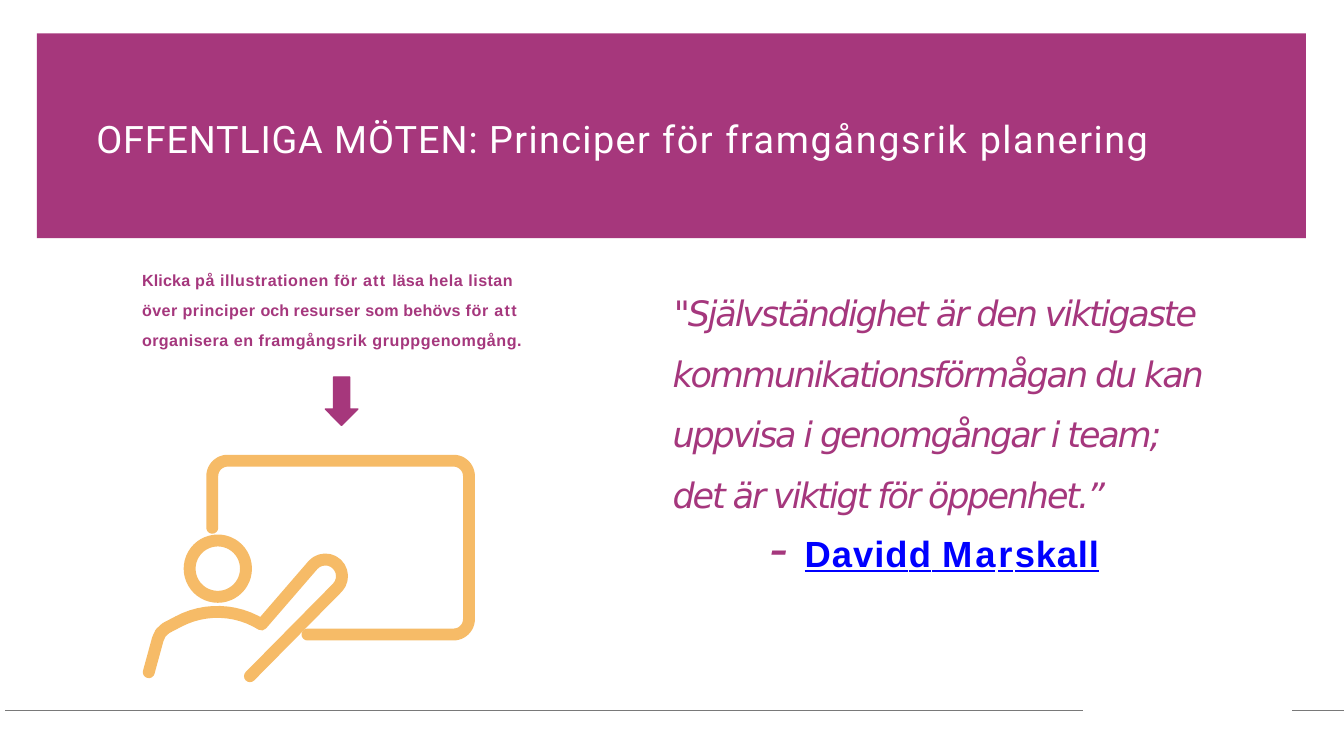
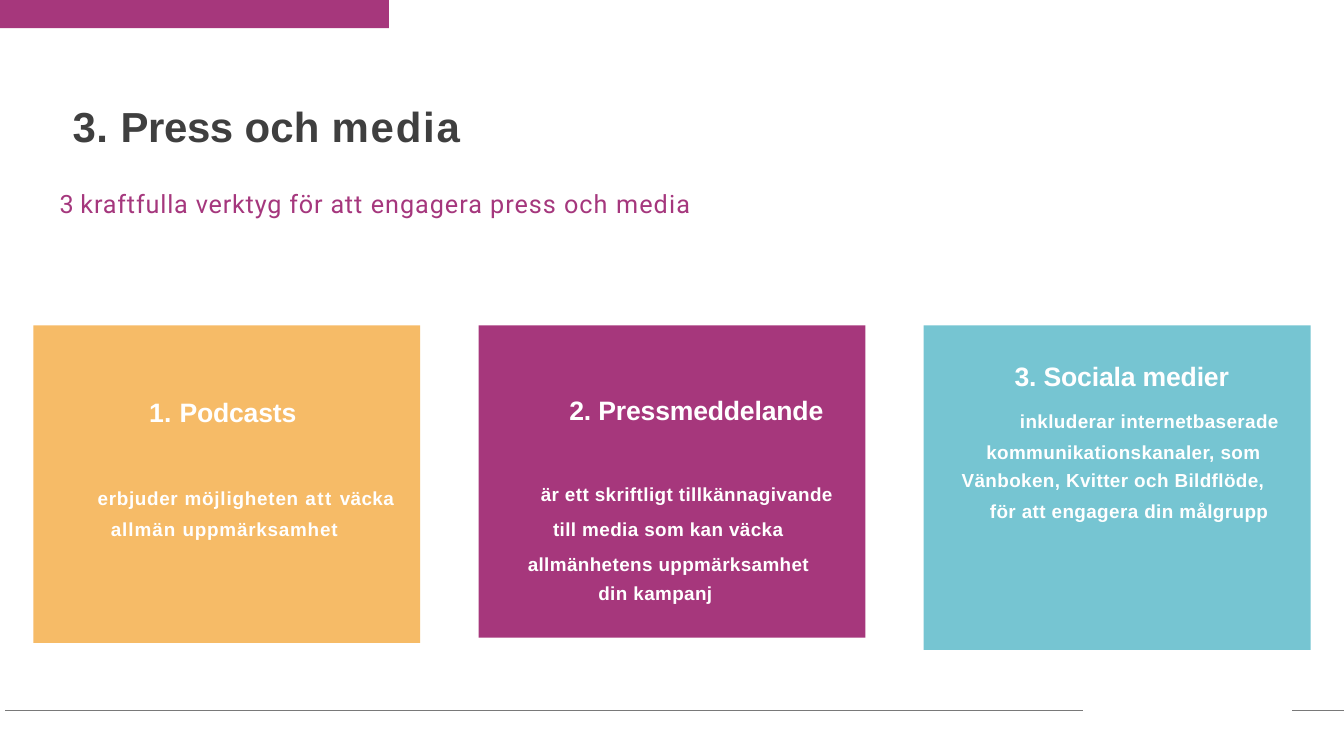
from dataclasses import dataclass, replace
from math import cos, radians, sin
from typing import Optional

from lxml import etree
from pptx import Presentation
from pptx.dml.color import RGBColor
from pptx.enum.shapes import MSO_CONNECTOR as Connector, MSO_SHAPE as Preset
from pptx.enum.text import MSO_ANCHOR as Anchor, MSO_AUTO_SIZE as AutoSize, PP_ALIGN as Align
from pptx.oxml.ns import qn
from pptx.util import Cm, Pt

PLUM = RGBColor(0xA6, 0x37, 0x7C)
PLUM_TEXT = RGBColor(0xA5, 0x37, 0x7D)
AMBER = RGBColor(0xF6, 0xBB, 0x67)
TEAL = RGBColor(0x76, 0xC5, 0xD2)
WHITE = RGBColor(0xFF, 0xFF, 0xFF)
CHARCOAL = RGBColor(0x3F, 0x3F, 0x3F)
LINK_BLUE = RGBColor(0x00, 0x00, 0xFF)
RULE_GREY = RGBColor(0x79, 0x79, 0x79)

SLIDE_WIDTH, SLIDE_HEIGHT = 33.87, 19.05
FOOTER_TOP = 17.91
TEXT_INSET = 0.03
STROKE = 8.5


@dataclass(frozen=True)
class Style:
    size: float
    font: str
    color: RGBColor
    bold: bool = False
    italic: bool = False
    underline: bool = False


@dataclass(frozen=True)
class Span:
    text: str
    spacing: float = 0
    style: Optional[Style] = None


@dataclass(frozen=True)
class Para:
    """A paragraph; left and first are indents in centimetres."""
    style: Style
    spans: tuple[Span, ...]
    left: float = 0
    first: float = 0
    before: float = 0
    line: float | Pt = 1.0
    align: Align = Align.LEFT


@dataclass(frozen=True)
class Frame:
    left: float
    top: float
    width: float
    height: float

    def lengths(self) -> tuple:
        return Cm(self.left), Cm(self.top), Cm(self.width), Cm(self.height)


@dataclass(frozen=True)
class Card:
    color: RGBColor
    height: float
    inset_top: float
    inset_right: float
    paras: tuple[Para, ...]


BANNER = Style(27, "Roboto", WHITE)
HEADING = Style(30, "Arial", CHARCOAL, bold=True)
SUBTITLE = Style(18, "Roboto", PLUM_TEXT)
HINT = Style(11.5, "Arial", PLUM_TEXT, bold=True)
QUOTE = Style(25, "DejaVu Sans", PLUM_TEXT, italic=True)
DASH = replace(QUOTE, size=37.5)
AUTHOR = Style(26, "Arial", LINK_BLUE, bold=True, underline=True)
CARD_HEAD = Style(19, "Arial", WHITE, bold=True)
CARD_BODY = replace(CARD_HEAD, size=13.5)

CARD_LEFT, CARD_TOP, CARD_WIDTH, CARD_PITCH = 0.84, 8.2, 9.75, 11.22
CARDS = (
    Card(AMBER, 8.0, 1.77, 0.43, (
        Para(CARD_HEAD, (Span("1. ", 0.2), Span("Podcasts", -0.1)), left=2.92),
        Para(CARD_BODY, (Span("erbjuder ", 0.5), Span("möjligheten ", 0.6), Span("att ", 1.1),
                         Span("väcka\n", 0.3), Span("allmän ", 0.7), Span("uppmärksamhet", 0.6)),
             left=0.31, first=1.09, before=35.5, line=1.4, align=Align.CENTER),
    )),
    Card(PLUM, 7.87, 1.72, 0.51, (
        Para(CARD_HEAD, (Span("2. Pressmeddelande", -0.1),), left=2.29),
        Para(CARD_BODY, (Span("är ett skriftligt tillkännagivande\ntill media som kan väcka\n"
                              "allmänhetens uppmärksamhet", 0.3),),
             left=0.34, first=0.94, before=32, line=1.55, align=Align.CENTER),
        Para(CARD_BODY, (Span("din kampanj", 0.3),), left=3.02, before=4),
    )),
    Card(TEAL, 8.18, 0.86, 0.48, (
        Para(CARD_HEAD, (Span("3. Sociala medier", -0.1),), left=2.29),
        Para(CARD_BODY, (Span("inkluderar internetbaserade", 0.3),),
             left=2.11, before=13, align=Align.CENTER),
        Para(CARD_BODY, (Span("kommunikationskanaler, som\nVänboken, Kvitter och Bildflöde,", 0.3),),
             left=0.28, first=0.53, before=2, line=1.24, align=Align.CENTER),
        Para(CARD_BODY, (Span("för att engagera din målgrupp", 0.3),),
             left=0.28, first=0.81, before=2, line=1.24, align=Align.CENTER),
    )),
)


def arc(x: float, y: float, radius: float, start: int, end: int, steps: int = 12) -> tuple:
    """Points along a circle, clockwise from start to end in degrees."""
    angles = [radians(start + (end - start) * step / steps) for step in range(steps + 1)]
    return tuple((x + radius * cos(angle), y + radius * sin(angle)) for angle in angles)


# Centre lines of the presenter icon, in centimetres
BOARD = ((5.35, 13.3), *arc(5.74, 12, 0.39, 180, 270), *arc(11.43, 12, 0.39, 270, 360),
         *arc(11.43, 15.6, 0.39, 0, 90), (7.75, 15.99))
PRESENTER = ((3.75, 16.94), (3.98, 16.1), (4.05, 15.95), (4.18, 15.83),
             *arc(5.48, 17.52, 2.1, 242, 302), *arc(8.2, 14.52, 0.42, 223, 403),
             (6.3, 17.04))
HEAD = Frame(4.78, 13.62, 1.42, 1.42)


def write(box, paras: tuple[Para, ...], top: float = TEXT_INSET, right: float = 0,
          anchor: Anchor = Anchor.TOP) -> None:
    """Fill the text frame of a box, run by run."""
    frame = box.text_frame
    frame.word_wrap = True
    frame.auto_size = AutoSize.NONE
    frame.vertical_anchor = anchor
    frame.margin_left = frame.margin_bottom = 0
    frame.margin_top, frame.margin_right = Cm(top), Cm(right)
    for index, para in enumerate(paras):
        line = frame.paragraphs[0] if index == 0 else frame.add_paragraph()
        props = line._p.get_or_add_pPr()
        props.set("marL", str(Cm(para.left)))
        props.set("indent", str(Cm(para.first)))
        etree.SubElement(props, qn("a:buNone"))
        line.alignment = para.align
        line.line_spacing = para.line
        line.space_before = Pt(para.before)
        line.space_after = Pt(0)
        for span in para.spans:
            for part, text in enumerate(span.text.split("\n")):
                if part:
                    line.add_line_break()
                if text:
                    add_run(line, text, span.spacing, span.style or para.style)


def add_run(line, text: str, spacing: float, style: Style) -> None:
    run = line.add_run()
    run.text = text
    font = run.font
    font.name, font.size = style.font, Pt(style.size)
    font.bold, font.italic, font.underline = style.bold, style.italic, style.underline
    font.color.rgb = style.color
    run._r.get_or_add_rPr().set("spc", str(round(spacing * 100)))


def place(box, frame: Frame):
    box.left, box.top, box.width, box.height = frame.lengths()
    return box


def add_filled(page, preset: Preset, frame: Frame, color: RGBColor):
    shape = page.shapes.add_shape(preset, *frame.lengths())
    shape.shadow.inherit = False
    shape.fill.solid()
    shape.fill.fore_color.rgb = color
    shape.line.fill.background()
    return shape


def stroke_only(shape) -> None:
    """Leave a shape with a thick rounded outline and no fill."""
    shape.shadow.inherit = False
    shape.fill.background()
    shape.line.color.rgb = AMBER
    shape.line.width = Pt(STROKE)
    outline = shape.line._get_or_add_ln()
    outline.set("cap", "rnd")
    etree.SubElement(outline, qn("a:round"))


def add_icon(page) -> None:
    for points in (BOARD, PRESENTER):
        (start_x, start_y), *rest = [(Cm(x), Cm(y)) for x, y in points]
        builder = page.shapes.build_freeform(start_x, start_y)
        builder.add_line_segments(rest, close=False)
        stroke_only(builder.convert_to_shape())
    stroke_only(page.shapes.add_shape(Preset.OVAL, *HEAD.lengths()))


def add_page(deck):
    """Add a title-and-body page with the two footer rules."""
    page = deck.slides.add_slide(deck.slide_layouts[1])
    for start, end in ((0.13, 27.28), (32.56, SLIDE_WIDTH)):
        rule = page.shapes.add_connector(Connector.STRAIGHT, Cm(start), Cm(FOOTER_TOP),
                                         Cm(end), Cm(FOOTER_TOP))
        rule.line.color.rgb = RULE_GREY
        rule.line.width = Pt(0.5)
        etree.SubElement(rule._element.spPr, qn("a:effectLst"))
    return page


def add_meeting_page(deck) -> None:
    page = add_page(deck)
    # Title band
    title = place(page.shapes.title, Frame(0.93, 0.84, 31.98, 5.16))
    title.fill.solid()
    title.fill.fore_color.rgb = PLUM
    write(title, (Para(BANNER, (
        Span("OFFENTLIGA ", 0.6), Span("MÖTEN: ", 0.7), Span("Principer ", 1),
        Span("för ", 1.1), Span("framgångsrik ", 1.2), Span("planering", 1.1)), left=1.5),),
        top=0.15, anchor=Anchor.MIDDLE)
    # Hint, arrow and icon
    hint = page.shapes.add_textbox(*Frame(3.53, 6.5, 9.8, 2.36).lengths())
    write(hint, (Para(HINT, (
        Span("Klicka ", 0.1), Span("på illustrationen ", 0.4), Span("för ", 0.5),
        Span("att ", 0.9), Span("läsa ", 0.1), Span("hela ", 0.4),
        Span("listan\növer principer ", 0.3), Span("och "), Span("resurser ", 0.2),
        Span("som behövs ", 0.1), Span("för ", 0.5), Span("att\n", 0.9),
        Span("organisera ", 0.3), Span("en framgångsrik ", 0.4),
        Span("gruppgenomgång.", 0.4)), left=0.05, line=1.56),))
    arrow = add_filled(page, Preset.DOWN_ARROW, Frame(8.2, 9.5, 0.82, 1.22), PLUM)
    arrow.line.color.rgb = PLUM
    arrow.line.width = Pt(1)
    add_icon(page)
    # Quotation
    quote = place(page.placeholders[1], Frame(16.92, 6.86, 13.9, 7.8))
    write(quote, (
        Para(QUOTE, (Span("\"Självständighet är den viktigaste\nkommunikationsförmågan du kan\n"
                          "uppvisa i genomgångar i team;\ndet är viktigt för öppenhet.”", -1.5),),
             left=0.03, first=0.03, line=1.44),
        Para(AUTHOR, (Span("-", -5.5, DASH), Span(" ", -0.5, DASH), Span("David", 0.7),
                      Span("d", 0.6), Span(" ", -0.5), Span("Ma", 2), Span("r", 1.6),
                      Span("skall", 0.6)),
             left=2.46, line=Pt(44.7)),
    ))


def add_media_page(deck) -> None:
    page = add_page(deck)
    add_filled(page, Preset.RECTANGLE, Frame(0, 0, 9.8, 0.71), PLUM)
    # Title and subtitle
    write(place(page.shapes.title, Frame(1.8, 2.51, 12, 1.35)), (Para(HEADING, (
        Span("3. ", 0.3), Span("Press ", -0.3), Span("och ", 0.1), Span("media", 1.3)),
        left=0.03),))
    write(place(page.placeholders[1], Frame(1.47, 4.72, 20.4, 0.84)), (Para(SUBTITLE, (
        Span("3 ", 0.2), Span("kraftfulla ", 0.6), Span("verktyg för att ", 0.6),
        Span("engagera press och ", 0.7), Span("media", 0.8)), left=0.03),))
    # Three cards
    for index, card in enumerate(CARDS):
        frame = Frame(CARD_LEFT + index * CARD_PITCH, CARD_TOP, CARD_WIDTH, card.height)
        box = add_filled(page, Preset.RECTANGLE, frame, card.color)
        write(box, card.paras, top=card.inset_top, right=card.inset_right)


def main() -> None:
    deck = Presentation()
    deck.slide_width, deck.slide_height = Cm(SLIDE_WIDTH), Cm(SLIDE_HEIGHT)
    add_meeting_page(deck)
    add_media_page(deck)
    deck.save("out.pptx")


if __name__ == "__main__":
    main()
